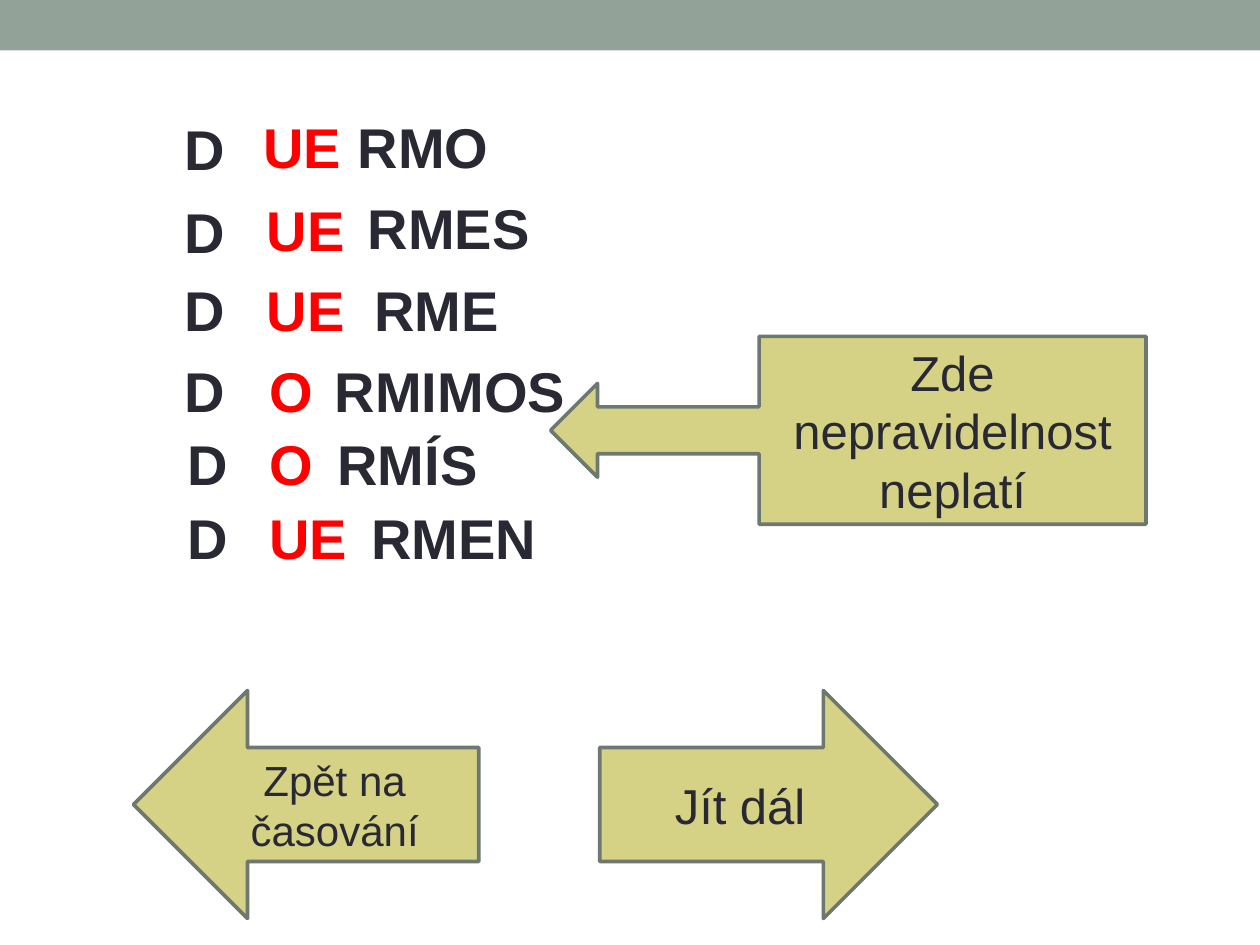
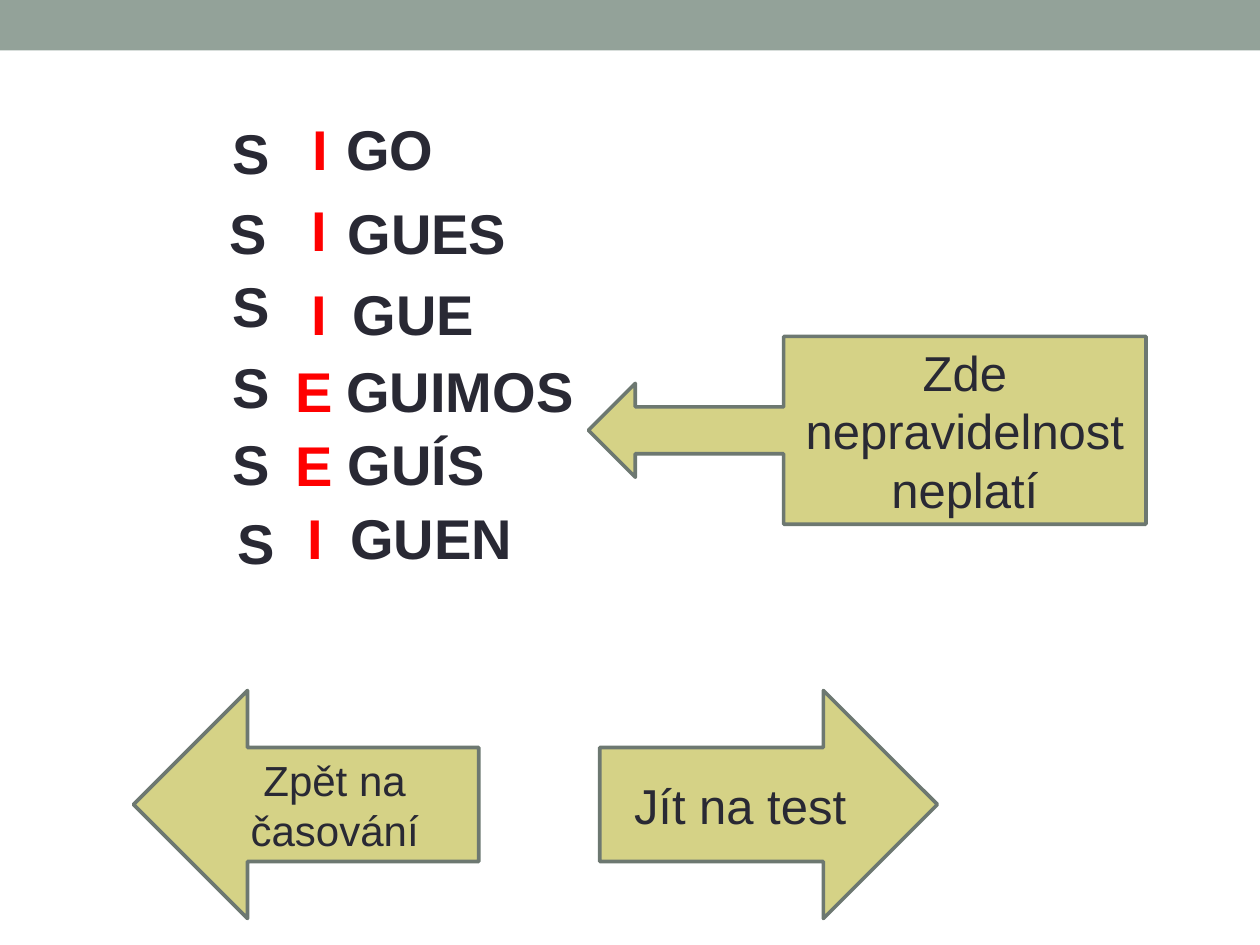
from pptx import Presentation, util as u
from pptx.dml import color
from pptx.enum import shapes, text

COLORS = {"band": "93A299", "ink": "292934", "change": "FF0000",
          "arrow": "D5D286", "outline": "6D7871"}
FONT = "Arial"

# Grid of 100 columns by 75 rows; all lengths below are in cells
CELL = u.Inches(0.1)
COLUMNS, ROWS = 100, 75

# Advance widths of the bold letters, in thousandths of the type size
LETTER_WIDTHS = {"D": 722, "E": 667, "G": 778, "I": 278, "Í": 278, "M": 833,
                 "N": 722, "O": 778, "R": 722, "S": 667, "U": 722}
VERB_SIZE = 32
VERB_HEIGHT = 6.4
ARROW_TOP, ARROW_HEIGHT = 54.8, 18.1
CALLOUT_RIGHT = 90.95

# Each verb: stem, changing vowel and ending, as (text, left, top)
DORMIR = [
    [("D", 13.7, 8.6), ("UE", 19.9, 8.4), ("RMO", 27.4, 8.4)],
    [("D", 13.7, 15.2), ("UE", 20.2, 15), ("RMES", 28.2, 14.9)],
    [("D", 13.7, 21.4), ("UE", 20.2, 21.4), ("RME", 28.7, 21.4)],
    [("D", 13.7, 27.8), ("O", 20.4, 27.8), ("RMIMOS", 25.6, 27.8)],
    [("D", 13.9, 33.6), ("O", 20.4, 33.6), ("RMÍS", 25.8, 33.6)],
    [("D", 13.9, 39.5), ("UE", 20.4, 39.5), ("RMEN", 28.5, 39.5)],
]
SEGUIR = [
    [("S", 17.5, 8.9), ("I", 23.8, 8.6), ("GO", 26.5, 8.6)],
    [("S", 17.2, 15.3), ("I", 23.7, 15), ("GUES", 26.6, 15.3)],
    [("S", 17.5, 21.1), ("I", 23.7, 21.7), ("GUE", 27, 21.7)],
    [("S", 17.5, 27.5), ("E", 22.5, 27.8), ("GUIMOS", 26.5, 27.8)],
    [("S", 17.5, 33.6), ("E", 22.5, 33.7), ("GUÍS", 26.6, 33.6)],
    [("S", 17.9, 39.9), ("I", 23.4, 39.5), ("GUEN", 26.8, 39.5)],
]


def rgb(name):
    return color.RGBColor.from_string(COLORS[name])


def cells(*lengths):
    return [round(length * CELL) for length in lengths]


def add_run(paragraph, words, size, color_name, bold=False):
    run = paragraph.add_run()
    run.text = words
    run.font.name = FONT
    run.font.size = u.Pt(size)
    run.font.bold = bold
    run.font.color.rgb = rgb(color_name)


def add_band(presentation, slide):
    """Draw the top band and move it to the master, so all slides share it."""
    band = slide.shapes.add_shape(shapes.MSO_SHAPE.RECTANGLE,
                                  *cells(0, 0, COLUMNS, 4))
    band.shadow.inherit = False
    band.fill.solid()
    band.fill.fore_color.rgb = rgb("band")
    band.line.fill.background()
    band.element.xpath(".//p:cNvPr")[0].set("id", "100")
    presentation.slide_master.shapes.element.append(band.element)


def add_verb_part(slide, letters, left, top, color_name):
    points = sum(LETTER_WIDTHS[letter] for letter in letters) * VERB_SIZE / 1000
    width = points / 7.2 + 2.05
    box = slide.shapes.add_textbox(*cells(left, top, width, VERB_HEIGHT))
    frame = box.text_frame
    frame.word_wrap = False
    frame.auto_size = text.MSO_AUTO_SIZE.SHAPE_TO_FIT_TEXT
    add_run(frame.paragraphs[0], letters, VERB_SIZE, color_name, bold=True)


def add_conjugation(slide, forms):
    for form in forms:
        for part, color_name in zip(form, ("ink", "change", "ink")):
            add_verb_part(slide, *part, color_name)


def add_arrow(slide, kind, place, words, size=28):
    arrow = slide.shapes.add_shape(kind, *cells(*place))
    arrow.shadow.inherit = False
    arrow.fill.solid()
    arrow.fill.fore_color.rgb = rgb("arrow")
    arrow.line.color.rgb = rgb("outline")
    arrow.line.width = u.Pt(2.08)
    frame = arrow.text_frame
    frame.word_wrap = True
    frame.vertical_anchor = text.MSO_ANCHOR.MIDDLE
    frame.paragraphs[0].alignment = text.PP_ALIGN.CENTER
    add_run(frame.paragraphs[0], words, size, "ink")


def add_verb_slide(presentation, forms, callout_left, next_label):
    slide = presentation.slides.add_slide(presentation.slide_layouts[6])
    add_conjugation(slide, forms)
    # Note on the regular forms
    add_arrow(slide, shapes.MSO_SHAPE.LEFT_ARROW_CALLOUT,
              (callout_left, 26.7, CALLOUT_RIGHT - callout_left, 14.9),
              "Zde nepravidelnost neplatí")
    # Navigation
    add_arrow(slide, shapes.MSO_SHAPE.LEFT_ARROW,
              (10.6, ARROW_TOP, 27.4, ARROW_HEIGHT), "Zpět na časování", 24)
    add_arrow(slide, shapes.MSO_SHAPE.RIGHT_ARROW,
              (47.6, ARROW_TOP, 26.8, ARROW_HEIGHT), next_label)
    return slide


def main():
    presentation = Presentation()
    presentation.slide_width, presentation.slide_height = cells(COLUMNS, ROWS)
    first_slide = add_verb_slide(presentation, DORMIR, 43.7, "Jít dál")
    add_band(presentation, first_slide)
    add_verb_slide(presentation, SEGUIR, 46.7, "Jít na test")
    presentation.save("out.pptx")


if __name__ == "__main__":
    main()
